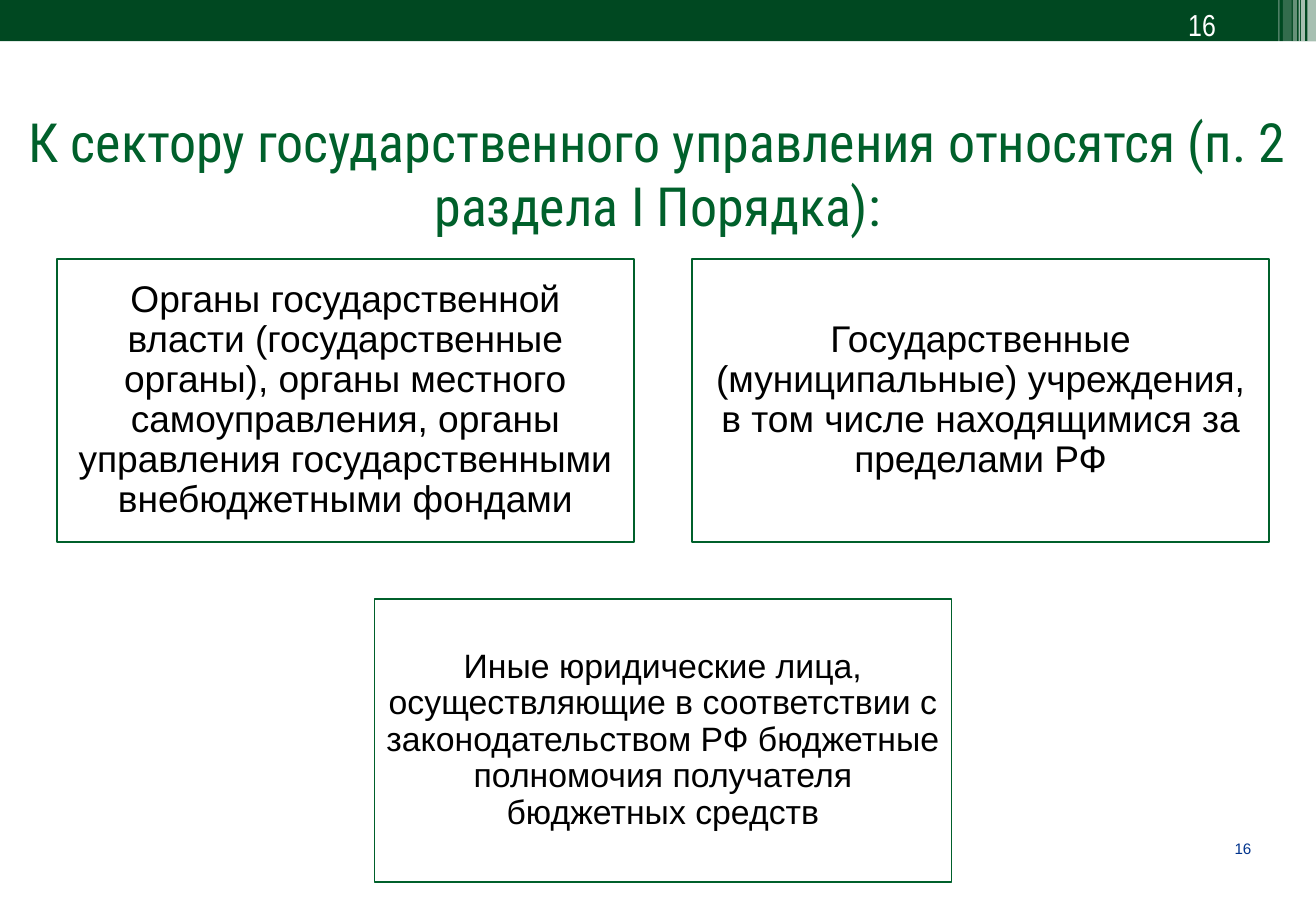
"""Build the slide that lists the parts of the general government sector."""
from dataclasses import dataclass
from typing import Optional

from lxml import etree
from pptx import Presentation
from pptx.dml.color import RGBColor
from pptx.enum.shapes import MSO_SHAPE
from pptx.enum.text import MSO_ANCHOR, PP_ALIGN
from pptx.oxml.ns import qn
from pptx.shapes.autoshape import Shape
from pptx.slide import Slide
from pptx.util import Cm, Pt

RECT = MSO_SHAPE.RECTANGLE
TOP, MIDDLE = MSO_ANCHOR.TOP, MSO_ANCHOR.MIDDLE
LEFT, CENTER, RIGHT = PP_ALIGN.LEFT, PP_ALIGN.CENTER, PP_ALIGN.RIGHT

COLORS = {
    "white": "FFFFFF",
    "black": "000000",
    "bar": "004821",
    "green": "00602B",
    "blue": "00338D",
}
WIDTH, HEIGHT = 27.51, 19.05
BAR_H = 0.86
CARD_X, CARD_Y = 1.19, 5.41
CARD_W, CARD_H = 12.06, 5.92
STEP_X, STEP_Y = 13.28, 7.11


@dataclass(frozen=True)
class Box:
    x: float
    y: float
    w: float
    h: float


@dataclass(frozen=True)
class Stripe:
    x: float
    w: float
    h: float
    alpha: int


@dataclass(frozen=True)
class Card:
    col: float
    row: int
    size: int
    inset: float
    text: str


STRIPES = [
    Stripe(27.33, 0.18, BAR_H, 65),
    Stripe(27.2, 0.08, BAR_H, 65),
    Stripe(27.15, 0.03, BAR_H, 60),
    Stripe(27.03, 0.08, BAR_H, 40),
    Stripe(26.82, 0.18, 0.91, 20),
    Stripe(26.72, 0.03, 0.91, 30),
]
CARDS = [
    Card(0, 0, 22, 0.23,
         "Органы государственной власти (государственные органы), органы местного "
         "самоуправления, органы управления государственными внебюджетными фондами"),
    Card(1, 0, 22, 0.23,
         "Государственные (муниципальные) учреждения, в том числе находящимися "
         "за пределами РФ"),
    Card(0.5, 1, 20, 0.2,
         "Иные юридические лица, осуществляющие в соответствии с законодательством "
         "РФ бюджетные полномочия получателя бюджетных средств"),
]


def paint(name: str) -> RGBColor:
    """Return the named colour."""
    return RGBColor.from_string(COLORS[name])


def write(shape: Shape, text: str, *, size: int, font: str = "Arial",
          color: str = "black", align: PP_ALIGN = CENTER,
          anchor: MSO_ANCHOR = TOP, pad_x: float = 0.25,
          pad_y: float = 0.13, lead: float = 1.0) -> None:
    """Set the text of a shape and its format."""
    frame = shape.text_frame
    frame.word_wrap = True
    frame.vertical_anchor = anchor
    frame.margin_left = frame.margin_right = Cm(pad_x)
    frame.margin_top = frame.margin_bottom = Cm(pad_y)
    para = frame.paragraphs[0]
    para.alignment = align
    para.line_spacing = lead
    run = para.add_run()
    run.text = text
    run.font.size = Pt(size)
    run.font.name = font
    run.font.color.rgb = paint(color)


def add_text(slide: Slide, box: Box) -> Shape:
    """Add an empty text box."""
    return slide.shapes.add_textbox(Cm(box.x), Cm(box.y), Cm(box.w), Cm(box.h))


def add_rect(slide: Slide, box: Box, fill: str, line: Optional[str] = None,
             alpha: int = 100) -> Shape:
    """Add a flat rectangle, outlined or see-through on request."""
    rect = slide.shapes.add_shape(RECT, Cm(box.x), Cm(box.y), Cm(box.w), Cm(box.h))
    rect.shadow.inherit = False
    rect.fill.solid()
    rect.fill.fore_color.rgb = paint(fill)
    if alpha < 100:
        tint = rect.fill._xPr.find(qn("a:solidFill"))[0]
        etree.SubElement(tint, qn("a:alpha")).set("val", str(alpha * 1000))
    if line:
        rect.line.color.rgb = paint(line)
        rect.line.width = Pt(1)
    else:
        rect.line.fill.background()
    return rect


def add_card(slide: Slide, card: Card) -> None:
    """Add an outlined card at its place in the grid."""
    box = Box(CARD_X + card.col * STEP_X, CARD_Y + card.row * STEP_Y, CARD_W, CARD_H)
    rect = add_rect(slide, box, "white", line="green")
    write(rect, card.text, size=card.size, anchor=MIDDLE,
          pad_x=card.inset, pad_y=card.inset, lead=0.9)


def main() -> None:
    """Draw the slide and save it."""
    deck = Presentation()
    deck.slide_width, deck.slide_height = Cm(WIDTH), Cm(HEIGHT)
    slide = deck.slides.add_slide(deck.slide_layouts[6])

    write(add_text(slide, Box(25.07, 17.55, 1.09, 0.41)), "16", size=9,
          color="blue", align=RIGHT, pad_x=0, pad_y=0)
    add_rect(slide, Box(0, 0, WIDTH, BAR_H), "bar")
    for item in STRIPES:
        add_rect(slide, Box(item.x, 0, item.w, item.h), "white", alpha=item.alpha)
    write(add_text(slide, Box(24.59, 0, 2.29, 1.02)), "16", size=18,
          font="Arial Narrow", color="white", align=LEFT)
    write(add_text(slide, Box(0, 2.13, WIDTH, 3)),
          "К сектору государственного управления относятся (п. 2 раздела I Порядка):",
          size=32, font="Roboto Condensed", color="green")
    for card in CARDS:
        add_card(slide, card)

    deck.save("out.pptx")


if __name__ == "__main__":
    main()
